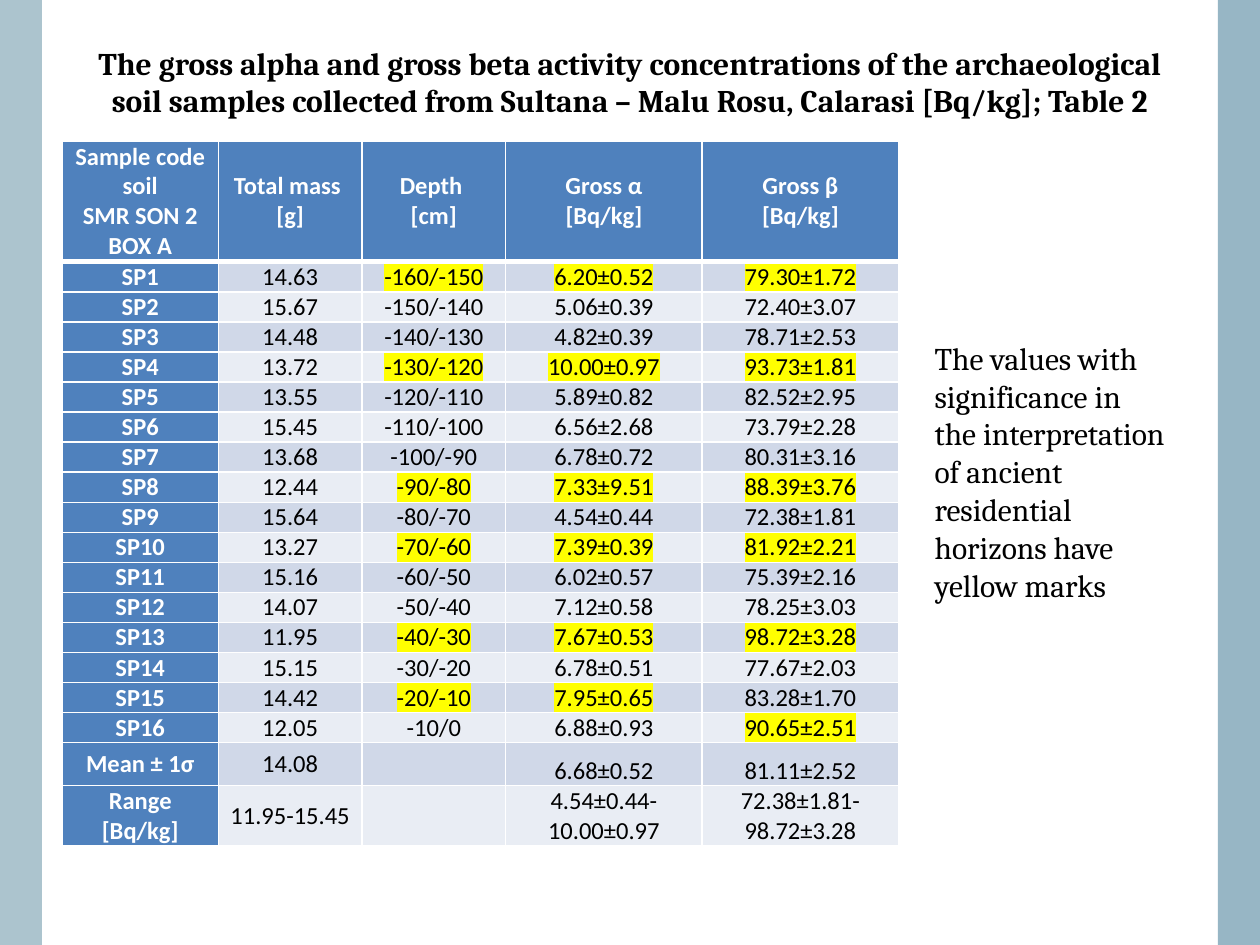
from dataclasses import dataclass

import lxml.etree
import pptx
import pptx.dml.color
import pptx.enum.shapes
import pptx.enum.text
import pptx.oxml.ns
import pptx.util

Pt = pptx.util.Pt
RGBColor = pptx.dml.color.RGBColor
Anchor = pptx.enum.text.MSO_ANCHOR
Align = pptx.enum.text.PP_ALIGN
qn = pptx.oxml.ns.qn

BLACK = RGBColor(0x00, 0x00, 0x00)
WHITE = RGBColor(0xFF, 0xFF, 0xFF)
YELLOW = RGBColor(0xFF, 0xFF, 0x00)
HEADER_BLUE = RGBColor(0x4F, 0x81, 0xBD)
BANDS = (RGBColor(0xD0, 0xD8, 0xE8), RGBColor(0xE9, 0xED, 0xF4))
LEFT_BAR = RGBColor(0xAC, 0xC4, 0xCE)
RIGHT_BAR = RGBColor(0x97, 0xB6, 0xC5)

TITLE = ("The gross alpha and gross beta activity concentrations of the archaeological "
         "soil samples collected from Sultana – Malu Rosu, Calarasi [Bq/kg]; Table 2")
NOTE = ("The values with significance in the interpretation of ancient "
        "residential horizons have yellow marks")

COLUMN_WIDTHS = (89.3, 82.1, 82.1, 112.3, 112.3)
HEADER_HEIGHT, SAMPLE_HEIGHT, MEAN_HEIGHT, RANGE_HEIGHT = 69, 17.2, 24.5, 34.5
DEPTH, ALPHA, BETA = 2, 3, 4


@dataclass
class Row:
    label: str
    mass: str
    depth: str
    alpha: str
    beta: str
    marked: tuple[int, ...] = ()
    height: float = SAMPLE_HEIGHT
    activity_anchor: Anchor = Anchor.MIDDLE

    def texts(self) -> tuple[str, ...]:
        return self.label, self.mass, self.depth, self.alpha, self.beta


ALL = (DEPTH, ALPHA, BETA)
ROWS = [
    Row("Sample code soil\nSMR SON 2 BOX A", "Total mass \n[g]", "Depth \n[cm]",
        "Gross α\n[Bq/kg]", "Gross β\n[Bq/kg]", height=HEADER_HEIGHT),
    Row("SP1", "14.63", "-160/-150", "6.20±0.52", "79.30±1.72", ALL),
    Row("SP2", "15.67", "-150/-140", "5.06±0.39", "72.40±3.07"),
    Row("SP3", "14.48", "-140/-130", "4.82±0.39", "78.71±2.53"),
    Row("SP4", "13.72", "-130/-120", "10.00±0.97", "93.73±1.81", ALL),
    Row("SP5", "13.55", "-120/-110", "5.89±0.82", "82.52±2.95"),
    Row("SP6", "15.45", "-110/-100", "6.56±2.68", "73.79±2.28"),
    Row("SP7", "13.68", "-100/-90", "6.78±0.72", "80.31±3.16"),
    Row("SP8", "12.44", "-90/-80", "7.33±9.51", "88.39±3.76", ALL),
    Row("SP9", "15.64", "-80/-70", "4.54±0.44", "72.38±1.81"),
    Row("SP10", "13.27", "-70/-60", "7.39±0.39", "81.92±2.21", ALL),
    Row("SP11", "15.16", "-60/-50", "6.02±0.57", "75.39±2.16"),
    Row("SP12", "14.07", "-50/-40", "7.12±0.58", "78.25±3.03"),
    Row("SP13", "11.95", "-40/-30", "7.67±0.53", "98.72±3.28", ALL),
    Row("SP14", "15.15", "-30/-20", "6.78±0.51", "77.67±2.03"),
    Row("SP15", "14.42", "-20/-10", "7.95±0.65", "83.28±1.70", (DEPTH, ALPHA)),
    Row("SP16", "12.05", "-10/0", "6.88±0.93", "90.65±2.51", (BETA,)),
    Row("Mean ± 1σ", "14.08", "", "6.68±0.52", "81.11±2.52",
        height=MEAN_HEIGHT, activity_anchor=Anchor.BOTTOM),
    Row("Range [Bq/kg]", "11.95-15.45", "", "4.54±0.44-10.00±0.97",
        "72.38±1.81-98.72±3.28", height=RANGE_HEIGHT),
]


def set_font(para, name: str, size: float, color: RGBColor, bold: bool) -> None:
    para.font.name = name
    para.font.size = Pt(size)
    para.font.bold = bold
    para.font.color.rgb = color


def highlight(span) -> None:
    mark = lxml.etree.SubElement(span._r.get_or_add_rPr(), qn("a:highlight"))
    lxml.etree.SubElement(mark, qn("a:srgbClr"), val=str(YELLOW))


def add_borders(cell, bottom_width: float) -> None:
    properties = cell._tc.get_or_add_tcPr()
    for side, width in (("L", 1), ("R", 1), ("T", 1), ("B", bottom_width)):
        line = lxml.etree.SubElement(properties, qn(f"a:ln{side}"), w=str(Pt(width)))
        fill = lxml.etree.SubElement(line, qn("a:solidFill"))
        lxml.etree.SubElement(fill, qn("a:srgbClr"), val=str(WHITE))


def add_bar(page, left: float, color: RGBColor) -> None:
    bar = page.shapes.add_shape(pptx.enum.shapes.MSO_SHAPE.RECTANGLE,
                                Pt(left), Pt(0), Pt(24), Pt(540))
    bar.shadow.inherit = False
    bar.fill.solid()
    bar.fill.fore_color.rgb = color
    bar.line.fill.background()


def fill_cell(cell, text: str, fill: RGBColor, heading: bool, marked: bool,
              anchor: Anchor, bottom_width: float) -> None:
    add_borders(cell, bottom_width)
    cell.fill.solid()
    cell.fill.fore_color.rgb = fill
    cell.margin_left = cell.margin_right = Pt(5)
    cell.margin_top = cell.margin_bottom = Pt(0)
    cell.vertical_anchor = anchor
    cell.text = text
    for para in cell.text_frame.paragraphs:
        para.alignment = Align.CENTER
        set_font(para, "Calibri", 14, WHITE if heading else BLACK, heading)
        if marked:
            for span in para.runs:
                highlight(span)


def add_activity_table(page) -> None:
    table = page.shapes.add_table(
        len(ROWS), len(COLUMN_WIDTHS), Pt(35.5), Pt(80.6),
        Pt(sum(COLUMN_WIDTHS)), Pt(sum(row.height for row in ROWS))).table
    for column, width in zip(table.columns, COLUMN_WIDTHS):
        column.width = Pt(width)
    for r, row in enumerate(ROWS):
        table.rows[r].height = Pt(row.height)
        for c, text in enumerate(row.texts()):
            heading = r == 0 or c == 0
            fill_cell(table.cell(r, c), text,
                      HEADER_BLUE if heading else BANDS[(r - 1) % 2],
                      heading, c in row.marked,
                      row.activity_anchor if c >= ALPHA else Anchor.MIDDLE,
                      3 if r == 0 else 1)


def main() -> None:
    deck = pptx.Presentation()
    deck.slide_width, deck.slide_height = Pt(720), Pt(540)
    page = deck.slides.add_slide(deck.slide_layouts[5])

    # Side bars
    add_bar(page, 0, LEFT_BAR)
    add_bar(page, 696, RIGHT_BAR)

    # Title
    title = page.shapes.title
    title.left, title.top, title.width, title.height = Pt(36), Pt(12.5), Pt(648), Pt(68)
    title.text_frame.text = TITLE
    title.text_frame.vertical_anchor = Anchor.MIDDLE
    para = title.text_frame.paragraphs[0]
    para.alignment = Align.CENTER
    set_font(para, "Cambria", 18, BLACK, True)

    # Activity table
    add_activity_table(page)

    # Note on the yellow marks
    box = page.shapes.add_textbox(Pt(527), Pt(190), Pt(147), Pt(181.5))
    box.text_frame.word_wrap = True
    box.text_frame.text = NOTE
    set_font(box.text_frame.paragraphs[0], "Cambria", 18, BLACK, False)

    deck.save("out.pptx")


if __name__ == "__main__":
    main()
